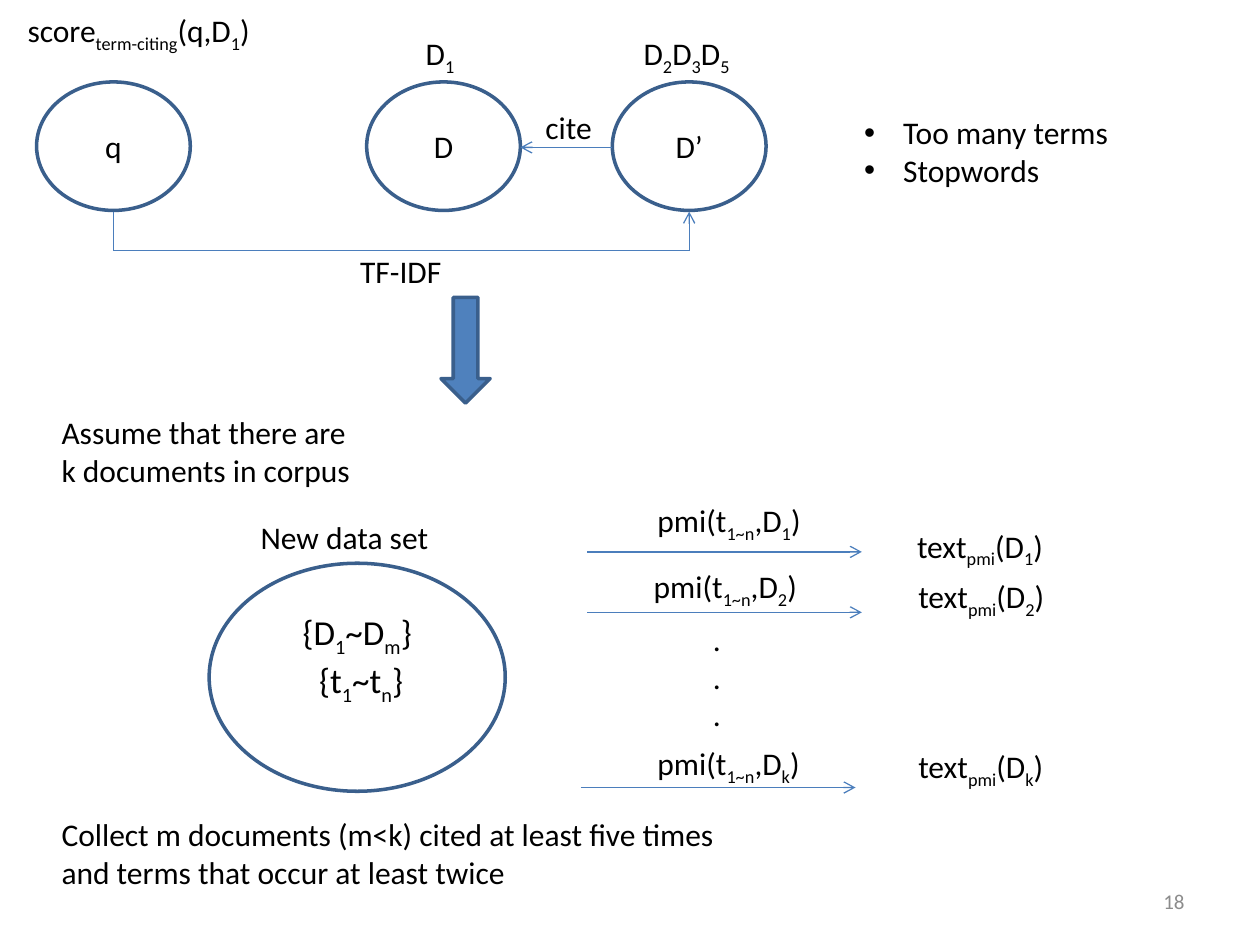
import pptx
import pptx.util
import pptx.dml.color
import pptx.enum.shapes
import pptx.enum.text
import pptx.oxml
import pptx.oxml.ns

Inches = pptx.util.Inches
Pt = pptx.util.Pt
Shape = pptx.enum.shapes.MSO_SHAPE
Align = pptx.enum.text.PP_ALIGN
Anchor = pptx.enum.text.MSO_ANCHOR
tint = {
    name: pptx.dml.color.RGBColor.from_string(code)
    for name, code in {
        "text": "000000", "page": "8C8C8C", "edge": "3A5F8C",
        "fill": "4F81BD", "link": "4B7EBC",
    }.items()
}

deck = pptx.Presentation()
deck.slide_width, deck.slide_height = Inches(10), Inches(7.5)
slide = deck.slides.add_slide(deck.slide_layouts[6])
shapes = slide.shapes


def write(frame, lines, size=18, align=Align.LEFT, color="text"):
    for row, line in enumerate(lines):
        para = frame.paragraphs[0] if row == 0 else frame.add_paragraph()
        para.alignment = align
        for part, words in enumerate(line.split("|")):
            run = para.add_run()
            run.text = words
            run.font.name = "Calibri"
            run.font.size = Pt(size)
            run.font.color.rgb = tint[color]
            if part % 2:
                run.font._element.set("baseline", "-25000")


def link(x1, y1, x2, y2, arrow=True):
    line = shapes.add_connector(
        pptx.enum.shapes.MSO_CONNECTOR.STRAIGHT,
        Inches(x1), Inches(y1), Inches(x2), Inches(y2))
    line.line.color.rgb = tint["link"]
    line.line.width = Pt(0.75)
    if arrow:
        tail = pptx.oxml.parse_xml(
            '<a:tailEnd %s type="arrow"/>' % pptx.oxml.ns.nsdecls("a"))
        line.line._get_or_add_ln().append(tail)
    line._element.spPr.append(pptx.oxml.parse_xml(
        "<a:effectLst %s/>" % pptx.oxml.ns.nsdecls("a")))


nodes = [
    (0.29, 0.65, 1.22, 1.02, 18, 0.05, ["q"]),
    (2.91, 0.65, 1.22, 1.02, 18, 0.05, ["D"]),
    (4.86, 0.65, 1.22, 1.02, 18, 0.05, ["D’"]),
    (1.66, 4.47, 2.35, 1.81, 20, 0.35, ["{D|1|~D|m|}", " {t|1|~t|n|}"]),
]
for left, top, width, height, size, base, lines in nodes:
    node = shapes.add_shape(
        Shape.OVAL, Inches(left), Inches(top), Inches(width), Inches(height))
    node.shadow.inherit = False
    node.fill.background()
    node.line.color.rgb = tint["edge"]
    node.line.width = Pt(2)
    node.text_frame.vertical_anchor = Anchor.MIDDLE
    node.text_frame.margin_bottom = Inches(base)
    write(node.text_frame, lines, size, Align.CENTER)

down = shapes.add_shape(
    Shape.DOWN_ARROW, Inches(3.5), Inches(2.36), Inches(0.39), Inches(0.84))
down.shadow.inherit = False
down.fill.solid()
down.fill.fore_color.rgb = tint["fill"]
down.line.color.rgb = tint["edge"]
down.line.width = Pt(2)

link(4.86, 1.17, 4.13, 1.17)
link(5.47, 1.99, 5.47, 1.68)
link(5.47, 1.99, 0.9, 1.99, False)
link(0.9, 1.99, 0.9, 1.68, False)
for left, top in [(4.66, 4.38), (4.66, 4.86), (4.61, 6.25)]:
    link(left, top, left + 2.18, top)

labels = [
    (0.12, 0.04, 2.15, 0.4, ["score|term-citing|(q,D|1|)"]),
    (3.28, 0.22, 0.44, 0.4, ["D|1"]),
    (5.01, 0.22, 0.93, 0.4, ["D|2|D|3|D|5"]),
    (4.23, 0.81, 0.57, 0.4, ["cite"]),
    (2.76, 1.95, 0.85, 0.4, ["TF-IDF"]),
    (0.39, 3.23, 2.54, 0.71,
     ["Assume that there are", "k documents in corpus"]),
    (1.97, 4.06, 1.55, 0.4, ["New data set"]),
    (0.39, 6.42, 5.5, 0.71,
     ["Collect m documents (m<k) cited at least five times",
      "and terms that occur at least twice"]),
    (5.56, 4.87, 0.27, 1.01, ["."] * 3),
]
for key, left, top, side, row in [
    ("1", 5.12, 3.93, 7.18, 4.13),
    ("2", 5.09, 4.45, 7.19, 4.53),
    ("k", 5.12, 5.86, 7.19, 5.88),
]:
    labels.append((left, top, 1.4, 0.4, [f"pmi(t|1~n|,D|{key}|)"]))
    labels.append((side, row, 1.26, 0.4, [f"text|pmi|(D|{key}|)"]))
for left, top, width, height, lines in labels:
    label = shapes.add_textbox(
        Inches(left), Inches(top), Inches(width), Inches(height))
    label.text_frame.word_wrap = False
    write(label.text_frame, lines)

notes = shapes.add_textbox(
    Inches(6.76), Inches(0.85), Inches(2.89), Inches(1.01))
notes.text_frame.word_wrap = True
write(notes.text_frame, ["Too many terms", "Stopwords"])
for para in notes.text_frame.paragraphs:
    props = para._p.get_or_add_pPr()
    props.set("marL", str(Inches(0.31)))
    props.set("indent", str(-Inches(0.31)))
    for mark in ['buFont %s typeface="Arial"', 'buChar %s char="•"']:
        props.append(pptx.oxml.parse_xml(
            "<a:" + mark % pptx.oxml.ns.nsdecls("a") + "/>"))

page = shapes.add_textbox(
    Inches(7.17), Inches(6.95), Inches(2.33), Inches(0.4))
page.text_frame.word_wrap = True
page.text_frame.vertical_anchor = Anchor.MIDDLE
write(page.text_frame, ["18"], 12, Align.RIGHT, "page")

deck.save("out.pptx")
